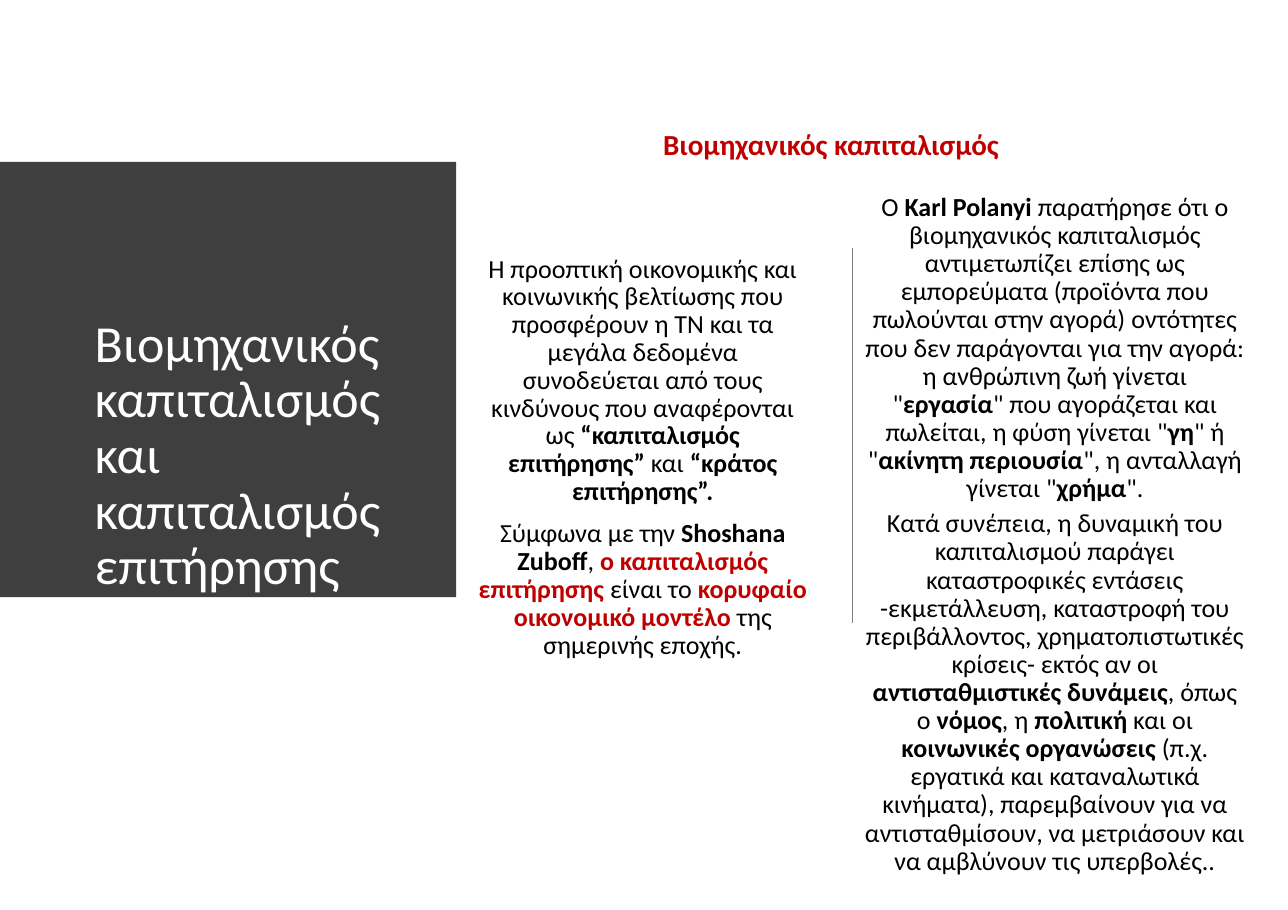
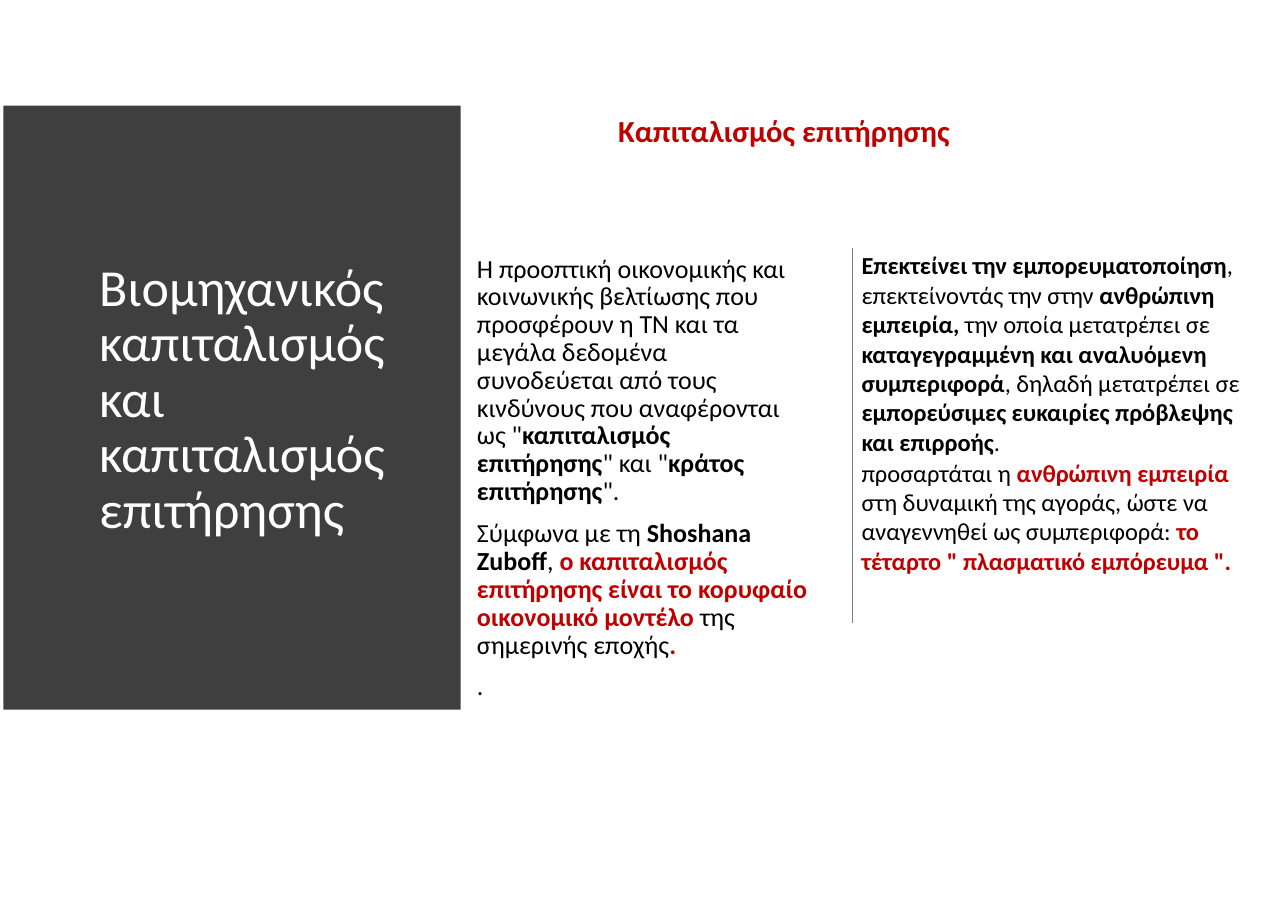
from lxml import etree
from pptx import Presentation
from pptx.dml.color import RGBColor
from pptx.enum.shapes import MSO_CONNECTOR, MSO_SHAPE
from pptx.enum.text import MSO_ANCHOR, MSO_AUTO_SIZE, PP_ALIGN
from pptx.oxml.ns import qn
from pptx.util import Pt

LEFT, CENTER = PP_ALIGN.LEFT, PP_ALIGN.CENTER
TOP = MSO_ANCHOR.TOP
NO_AUTOFIT = MSO_AUTO_SIZE.NONE
RECTANGLE = MSO_SHAPE.RECTANGLE
STRAIGHT = MSO_CONNECTOR.STRAIGHT

FONT = "Calibri"
BLACK, WHITE, RED = "000000", "FFFFFF", "C00000"
PANEL_GREY, RULE_GREY = "3F3F3F", "7E7E7E"
PANEL_TEXT = "Βιομηχανικός καπιταλισμός και καπιταλισμός επιτήρησης"
PANEL_WIDTH = 298.8
RULE_X, RULE_TOP, RULE_BOTTOM = 557.3, 162, 407

# Segments are separated by "|"; "*" opens a bold one and "!" a bold red one.
SLIDES = [
    {
        "panel": (-0.7, 105.8, 284.4),
        "title": ("Βιομηχανικός καπιταλισμός", 19, (432.7, 81.4, 249.1, 23.8)),
        "columns": [
            {
                "box": (311, 164.2, 217.4, 270),
                "top": 3, "size": 17, "align": CENTER,
                "paragraphs": [
                    ("Η προοπτική οικονομικής και κοινωνικής βελτίωσης που προσφέρουν η ΤΝ "
                     "και τα μεγάλα δεδομένα συνοδεύεται από τους κινδύνους που αναφέρονται "
                     "ως |*“καπιταλισμός επιτήρησης” |και |*“κράτος επιτήρησης”.", 0.89, 3.2),
                    ("Σύμφωνα με την |*Shoshana Zuboff|, |!ο καπιταλισμός επιτήρησης |είναι το "
                     "|!κορυφαίο οικονομικό μοντέλο |της σημερινής εποχής.", 0.9, 8.8),
                ],
            },
            {
                "box": (564.5, 123.8, 249.1, 452.9),
                "top": 3, "size": 17, "align": CENTER,
                "paragraphs": [
                    ("Ο |*Karl Polanyi |παρατήρησε ότι ο βιομηχανικός καπιταλισμός αντιμετωπίζει "
                     "επίσης ως εμπορεύματα (προϊόντα που πωλούνται στην αγορά) οντότητες που δεν "
                     "παράγονται για την αγορά: η ανθρώπινη ζωή γίνεται \"|*εργασία|\" που "
                     "αγοράζεται και πωλείται, η φύση γίνεται \"|*γη|\" ή \"|*ακίνητη περιουσία"
                     "|\", η ανταλλαγή γίνεται \"|*χρήμα|\".", 0.9, 3),
                    ("Κατά συνέπεια, η δυναμική του καπιταλισμού παράγει καταστροφικές εντάσεις "
                     "-εκμετάλλευση, καταστροφή του περιβάλλοντος, χρηματοπιστωτικές κρίσεις- "
                     "εκτός αν οι |*αντισταθμιστικές δυνάμεις|, όπως ο |*νόμος|, η |*πολιτική"
                     "| και οι |*κοινωνικές οργανώσεις |(π.χ. εργατικά και καταναλωτικά κινήματα), "
                     "παρεμβαίνουν για να αντισταθμίσουν, να μετριάσουν και να αμβλύνουν τις "
                     "υπερβολές..", 0.9, 4.7),
                ],
            },
        ],
    },
    {
        "panel": (2.2, 69.1, 394.6),
        "title": ("Καπιταλισμός επιτήρησης", 20, (403.2, 72, 308.9, 25.2)),
        "columns": [
            {
                "box": (311, 164.2, 217.4, 316.1),
                "top": 3, "size": 17, "align": LEFT,
                "paragraphs": [
                    ("Η προοπτική οικονομικής και κοινωνικής βελτίωσης που προσφέρουν η ΤΝ "
                     "και τα μεγάλα δεδομένα συνοδεύεται από τους κινδύνους που αναφέρονται "
                     "ως \"|*καπιταλισμός επιτήρησης|\" και \"|*κράτος επιτήρησης|\".", 0.89, 3.2),
                    ("Σύμφωνα με τη |*Shoshana Zuboff|, |!ο καπιταλισμός επιτήρησης είναι το "
                     "κορυφαίο οικονομικό μοντέλο |της σημερινής εποχής|!.", 0.9, 8.8),
                    (".", 0.9, 8.8),
                ],
            },
            {
                "box": (562.3, 162.7, 252, 215.3),
                "top": 1, "size": 16, "align": LEFT,
                "paragraphs": [
                    ("*Επεκτείνει την εμπορευματοποίηση|, επεκτείνοντάς την στην |*ανθρώπινη "
                     "εμπειρία, |την οποία μετατρέπει σε |*καταγεγραμμένη και αναλυόμενη "
                     "συμπεριφορά|, δηλαδή μετατρέπει σε |*εμπορεύσιμες ευκαιρίες πρόβλεψης "
                     "και επιρροής|.", 1.0, 1),
                    ("προσαρτάται η |!ανθρώπινη εμπειρία |στη δυναμική της αγοράς, ώστε να "
                     "αναγεννηθεί ως συμπεριφορά: |!το τέταρτο \" πλασματικό εμπόρευμα \".", 1.0, 1),
                ],
            },
        ],
    },
]


def color(value):
    return RGBColor.from_string(value)


def prepare_frame(shape, left, top, right=0):
    frame = shape.text_frame
    frame.word_wrap = True
    frame.auto_size = NO_AUTOFIT
    frame.vertical_anchor = TOP
    frame.margin_left, frame.margin_top = Pt(left), Pt(top)
    frame.margin_right, frame.margin_bottom = Pt(right), Pt(0)
    return frame


presentation = Presentation()
presentation.slide_width, presentation.slide_height = Pt(841.68), Pt(594.72)

for content in SLIDES:
    slide = presentation.slides.add_slide(presentation.slide_layouts[5])

    left, top, height = content["panel"]
    panel = slide.shapes.add_shape(RECTANGLE, Pt(left), Pt(top), Pt(PANEL_WIDTH), Pt(height))
    panel.shadow.inherit = False
    panel.fill.solid()
    panel.fill.fore_color.rgb = color(PANEL_GREY)
    panel.line.fill.background()
    paragraph = prepare_frame(panel, 62.6, 102, 20).paragraphs[0]
    paragraph.text = PANEL_TEXT
    paragraph.alignment = LEFT
    paragraph.line_spacing = 0.89
    paragraph.font.name, paragraph.font.size = FONT, Pt(34)
    paragraph.font.color.rgb = color(WHITE)

    text, size, box = content["title"]
    title = slide.shapes.title
    title.left, title.top, title.width, title.height = [Pt(length) for length in box]
    paragraph = prepare_frame(title, 0.72, 1).paragraphs[0]
    paragraph.text = text
    paragraph.alignment = LEFT
    paragraph.space_before = Pt(1)
    paragraph.font.name, paragraph.font.size = FONT, Pt(size)
    paragraph.font.bold = True
    paragraph.font.color.rgb = color(RED)

    rule = slide.shapes.add_connector(
        STRAIGHT, Pt(RULE_X), Pt(RULE_TOP), Pt(RULE_X), Pt(RULE_BOTTOM))
    rule.line.color.rgb = color(RULE_GREY)
    rule.line.width = Pt(0.85)
    etree.SubElement(rule._element.spPr, qn("a:effectLst"))

    for column in content["columns"]:
        textbox = slide.shapes.add_textbox(*[Pt(length) for length in column["box"]])
        frame = prepare_frame(textbox, 0.72, column["top"])
        for index, (text, spacing, before) in enumerate(column["paragraphs"]):
            paragraph = frame.add_paragraph() if index else frame.paragraphs[0]
            paragraph.alignment = column["align"]
            paragraph.line_spacing = spacing
            paragraph.space_before = Pt(before)
            paragraph.font.name, paragraph.font.size = FONT, Pt(column["size"])
            for segment in text.split("|"):
                run = paragraph.add_run()
                run.text = segment.lstrip("*!")
                run.font.bold = segment[0] in "*!"
                run.font.color.rgb = color(RED if segment[0] == "!" else BLACK)

presentation.save("out.pptx")
